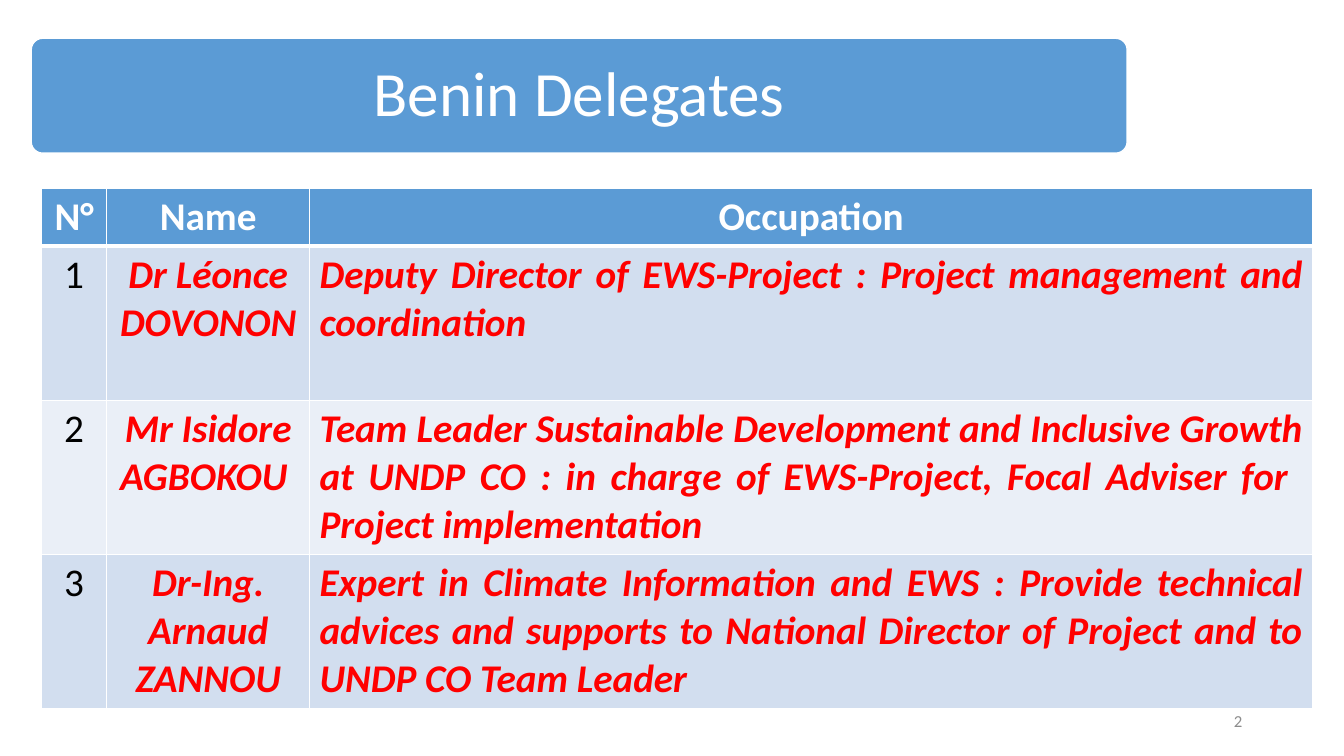
import dataclasses

import lxml.etree
import pptx
import pptx.dml.color
import pptx.enum.shapes
import pptx.enum.text
import pptx.oxml.ns
import pptx.util

Inches = pptx.util.Inches
Pt = pptx.util.Pt
Align = pptx.enum.text.PP_ALIGN


@dataclasses.dataclass(frozen=True)
class Theme:
    font: str = "Calibri"
    white: str = "FFFFFF"
    black: str = "000000"
    accent: str = "5B9BD5"
    red: str = "FF0000"
    gray: str = "8C8C8C"
    bands: tuple = ("D2DEEF", "EAEFF7")
    title_size: int = 45
    table_size: int = 28
    number_size: int = 12


def rgb(value):
    return pptx.dml.color.RGBColor.from_string(value)


class SlideBuilder:
    def __init__(self, page, theme):
        self.page = page
        self.theme = theme

    def add_text(self, frame, text, align, size, color, **formats):
        frame.word_wrap = True
        para = frame.paragraphs[0]
        para.alignment = align
        span = para.add_run()
        span.text = text
        values = {"name": self.theme.font, "size": Pt(size), **formats}
        for name, value in values.items():
            setattr(span.font, name, value)
        span.font.color.rgb = rgb(color)
        return para

    def banner(self, left, top, width, height):
        box = self.page.shapes.add_shape(
            pptx.enum.shapes.MSO_SHAPE.ROUNDED_RECTANGLE,
            *map(Inches, (left, top, width, height)))
        box.adjustments[0] = 0.1
        box.shadow.inherit = False
        box.fill.solid()
        box.fill.fore_color.rgb = rgb(self.theme.accent)
        box.line.color.rgb = rgb(self.theme.white)
        box.line.width = Pt(1)

    def title(self, text, left, top, width, height):
        box = self.page.shapes.title
        self.page.shapes.element.append(box.element)
        placement = {"left": left, "top": top, "width": width, "height": height}
        for name, value in placement.items():
            setattr(box, name, Inches(value))
        frame = box.text_frame
        frame.auto_size = pptx.enum.text.MSO_AUTO_SIZE.NONE
        frame.vertical_anchor = pptx.enum.text.MSO_ANCHOR.MIDDLE
        for side in ("left", "top", "right", "bottom"):
            setattr(frame, f"margin_{side}", Inches(0.19))
        para = self.add_text(frame, text, Align.CENTER,
                             self.theme.title_size, self.theme.white)
        para.line_spacing = 0.9

    def page_number(self, text, left, top, width, height):
        box = self.page.shapes.add_textbox(
            *map(Inches, (left, top, width, height)))
        box.text_frame.vertical_anchor = pptx.enum.text.MSO_ANCHOR.MIDDLE
        self.add_text(box.text_frame, text, Align.RIGHT,
                      self.theme.number_size, self.theme.gray)

    def borders(self, cell, widths):
        properties = cell._tc.get_or_add_tcPr()
        qualify = pptx.oxml.ns.qn
        for side, width in widths.items():
            line = lxml.etree.SubElement(
                properties, qualify(f"a:ln{side}"), w=str(Pt(width)))
            fill = lxml.etree.SubElement(line, qualify("a:solidFill"))
            lxml.etree.SubElement(
                fill, qualify("a:srgbClr"), val=self.theme.white)

    def table(self, rows, left, top, columns, heights):
        theme = self.theme
        table = self.page.shapes.add_table(
            len(rows), len(columns), Inches(left), Inches(top),
            Inches(sum(columns)), Inches(sum(heights))).table
        for column, width in zip(table.columns, columns):
            column.width = Inches(width)
        for row, height in zip(table.rows, heights):
            row.height = Inches(height)
        for r, values in enumerate(rows):
            for c, text in enumerate(values):
                cell = table.cell(r, c)
                header, number = r == 0, c == 0
                self.borders(cell, {"L": 1, "R": 1,
                                    "T": 3 if r == 1 else 1,
                                    "B": 3 if header else 1})
                cell.fill.solid()
                cell.fill.fore_color.rgb = rgb(
                    theme.accent if header else theme.bands[(r - 1) % 2])
                color = (theme.white if header
                         else theme.black if number else theme.red)
                align = Align.JUSTIFY if c == 2 and not header else Align.CENTER
                self.add_text(cell.text_frame, text, align,
                              theme.table_size, color,
                              bold=header or not number,
                              italic=not header and not number)


DELEGATES = (
    ("N°", "Name", "Occupation"),
    ("1", "Dr Léonce DOVONON",
     "Deputy Director of EWS-Project : Project management and coordination "),
    ("2", "Mr Isidore AGBOKOU ",
     "Team Leader Sustainable Development and Inclusive Growth at UNDP CO : "
     "in charge of EWS-Project, Focal Adviser for  Project implementation "),
    ("3", "Dr-Ing. Arnaud ZANNOU",
     "Expert in Climate Information and EWS : Provide technical advices and "
     "supports to National Director of Project and to UNDP CO Team Leader"),
)


def main():
    deck = pptx.Presentation()
    deck.slide_width = Inches(13.33)
    deck.slide_height = Inches(7.5)
    page = deck.slides.add_slide(deck.slide_layouts.get_by_name("Title Only"))
    builder = SlideBuilder(page, Theme())
    builder.banner(0.31, 0.38, 10.87, 1.14)
    builder.title("Benin Delegates", 0.34, 0.42, 10.81, 1.07)
    builder.page_number("2", 9.42, 6.95, 3, 0.4)
    builder.table(DELEGATES, 0.41, 1.87, (0.65, 2.01, 9.95),
                  (0.57, 1.53, 1.53, 1.53))
    deck.save("out.pptx")


if __name__ == "__main__":
    main()
